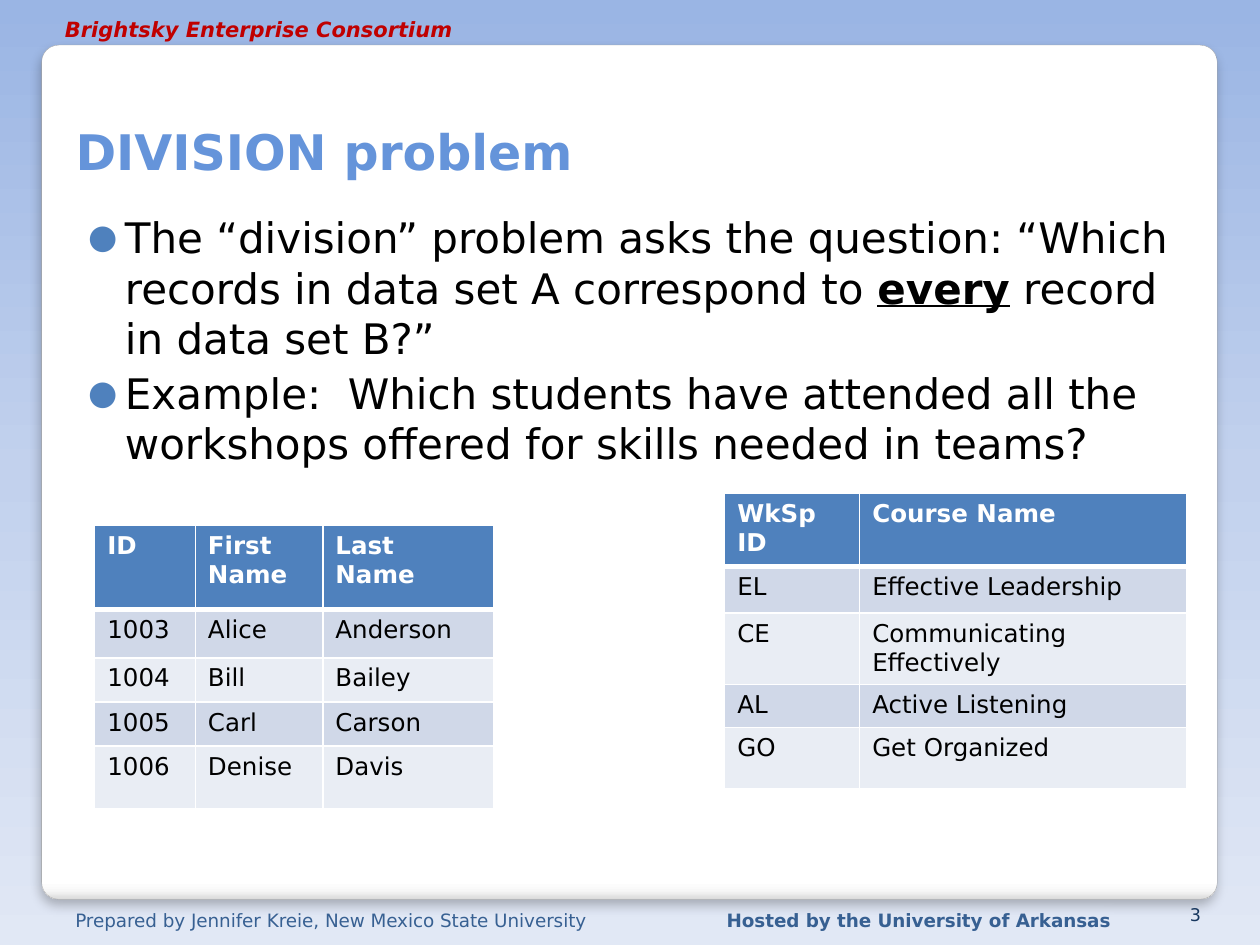
from dataclasses import dataclass

from pptx import Presentation
from pptx.dml.color import RGBColor
from pptx.enum.shapes import MSO_SHAPE
from pptx.enum.text import MSO_ANCHOR, PP_ALIGN
from pptx.oxml import parse_xml
from pptx.oxml.ns import nsdecls, qn
from pptx.util import Cm, Pt


@dataclass(frozen=True)
class Theme:
    font: str = "DejaVu Sans"
    background: tuple = ((0, "9AB5E4"), (50, "C2D1ED"), (100, "E1E8F5"))
    panel: tuple = ((0, "FFFFFF"), (98, "FFFFFF"), (99, "F7F7F7"), (100, "DADADA"))
    panel_line: str = "A4A4A4"
    shadow: str = "000000"
    title: str = "6594DA"
    text: str = "000000"
    accent: str = "4F81BD"
    footer: str = "376092"
    number: str = "17375E"
    banner: str = "C00000"
    white: str = "FFFFFF"
    bands: tuple = ("D0D8E8", "E9EDF4")
    title_size: float = 28
    body_size: float = 24
    table_size: float = 14
    banner_size: float = 12
    footer_size: float = 10.5
    number_size: float = 10


THEME = Theme()


def add_run(paragraph, text, size, color=THEME.text, bold=False, italic=False, underline=False):
    run = paragraph.add_run()
    run.text = text
    font = run.font
    font.name = THEME.font
    font.size = Pt(size)
    font.color.rgb = RGBColor.from_string(color)
    font.bold, font.italic, font.underline = bold, italic, underline


def fill_gradient(fill, element, stops):
    fill.gradient()
    fill.gradient_angle = 270
    stop_list = next(element.iter(qn("a:gsLst")))
    for stop in list(stop_list):
        stop_list.remove(stop)
    for position, color in stops:
        stop_list.append(parse_xml(
            f'<a:gs {nsdecls("a")} pos="{position * 1000}"><a:srgbClr val="{color}"/></a:gs>'))


def add_panel(slide):
    panel = slide.shapes.add_shape(
        MSO_SHAPE.ROUNDED_RECTANGLE, Cm(0.84), Cm(0.91), Cm(23.7), Cm(17.22))
    panel.adjustments[0] = 0.02
    fill_gradient(panel.fill, panel._element, THEME.panel)
    panel.line.color.rgb = RGBColor.from_string(THEME.panel_line)
    panel.line.width = Pt(0.16)
    panel.shadow.inherit = False
    effects = next(panel._element.iter(qn("a:effectLst")))
    effects.append(parse_xml(
        f'<a:outerShdw {nsdecls("a")} blurRad="{Pt(6)}" dist="{Pt(4)}" dir="5400000" rotWithShape="0">'
        f'<a:srgbClr val="{THEME.shadow}"><a:alpha val="25000"/></a:srgbClr></a:outerShdw>'))
    slide.shapes._spTree.insert(2, panel._element)


def add_title(slide, text):
    title = slide.shapes.title
    title.left, title.top, title.width, title.height = Cm(1.27), Cm(0.84), Cm(22.73), Cm(2.92)
    title.text_frame.vertical_anchor = MSO_ANCHOR.BOTTOM
    paragraph = title.text_frame.paragraphs[0]
    paragraph.alignment = PP_ALIGN.LEFT
    add_run(paragraph, text, THEME.title_size, THEME.title, bold=True)


def add_label(slide, text, left, top, width, anchor=MSO_ANCHOR.TOP, align=PP_ALIGN.LEFT, **style):
    box = slide.shapes.add_textbox(Cm(left), Cm(top), Cm(width), Cm(0.58))
    box.text_frame.word_wrap = True
    box.text_frame.vertical_anchor = anchor
    paragraph = box.text_frame.paragraphs[0]
    paragraph.alignment = align
    add_run(paragraph, text, **style)


def set_bullet(paragraph):
    properties = paragraph._p.get_or_add_pPr()
    properties.set("marL", str(Cm(0.74)))
    properties.set("indent", str(-Cm(0.74)))
    for bullet in (f'<a:buClr {nsdecls("a")}><a:srgbClr val="{THEME.accent}"/></a:buClr>',
                   f'<a:buSzPct {nsdecls("a")} val="80000"/>',
                   f'<a:buFont {nsdecls("a")} typeface="{THEME.font}"/>',
                   f'<a:buChar {nsdecls("a")} char="●"/>'):
        properties.append(parse_xml(bullet))


def add_bullets(slide, items):
    frame = slide.shapes.add_textbox(Cm(1.27), Cm(4.02), Cm(22.73), Cm(12.7)).text_frame
    frame.word_wrap = True
    frame.margin_left, frame.margin_top = Cm(0.51), Cm(0.25)
    for index, runs in enumerate(items):
        paragraph = frame.add_paragraph() if index else frame.paragraphs[0]
        paragraph.space_before = Pt(2.5)
        set_bullet(paragraph)
        for text, style in runs:
            add_run(paragraph, text, THEME.body_size, **style)


def set_borders(cell, top, bottom):
    properties = cell._tc.get_or_add_tcPr()
    sides = (("lnL", 1), ("lnR", 1), ("lnT", top), ("lnB", bottom))
    for index, (side, width) in enumerate(sides):
        properties.insert(index, parse_xml(
            f'<a:{side} {nsdecls("a")} w="{Pt(width)}"><a:solidFill>'
            f'<a:srgbClr val="{THEME.white}"/></a:solidFill></a:{side}>'))


def add_data_table(slide, left, top, widths, heights, rows):
    table = slide.shapes.add_table(
        len(rows), len(widths), Cm(left), Cm(top), Cm(sum(widths)), Cm(sum(heights))).table
    table.horz_banding = False
    table.first_row = False
    for column, width in zip(table.columns, widths):
        column.width = Cm(width)
    for row_index, (row, height, texts) in enumerate(zip(table.rows, heights, rows)):
        row.height = Cm(height)
        header = row_index == 0
        fill = THEME.accent if header else THEME.bands[(row_index - 1) % 2]
        for cell, text in zip(row.cells, texts):
            cell.fill.solid()
            cell.fill.fore_color.rgb = RGBColor.from_string(fill)
            set_borders(cell, top=3 if row_index == 1 else 1, bottom=3 if header else 1)
            add_run(cell.text_frame.paragraphs[0], text, THEME.table_size,
                    THEME.white if header else THEME.text, bold=header)


def main():
    presentation = Presentation()
    presentation.slide_width, presentation.slide_height = Cm(25.4), Cm(19.05)
    slide = presentation.slides.add_slide(presentation.slide_layouts[5])
    fill_gradient(slide.background.fill, slide._element, THEME.background)
    add_panel(slide)
    add_label(slide, "Prepared by Jennifer Kreie, New Mexico State University", 1.27, 18.2, 11.33,
              size=THEME.footer_size, color=THEME.footer)
    add_label(slide, "Hosted by the University of Arkansas", 14.4, 18.2, 8.46,
              size=THEME.footer_size, color=THEME.footer, bold=True)
    add_label(slide, "Brightsky Enterprise Consortium", 1.06, 0.2, 8.46,
              size=THEME.banner_size, color=THEME.banner, bold=True, italic=True)
    add_title(slide, "DIVISION problem")
    add_bullets(slide, [
        [("The “division” problem asks the question: “Which records in data set A correspond to ", {}),
         ("every", {"bold": True, "underline": True}),
         (" record in data set B?”", {})],
        [("Example:  Which students have attended all the workshops offered for skills needed in teams?", {})],
    ])
    add_label(slide, "3", 23.19, 18.2, 1.27, anchor=MSO_ANCHOR.BOTTOM, align=PP_ALIGN.RIGHT,
              size=THEME.number_size, color=THEME.number)
    add_data_table(slide, 1.91, 10.59, [2.03, 2.57, 3.45], [1.7, 0.97, 0.89, 0.89, 1.27], [
        ("ID", "First Name", "Last Name"),
        ("1003", "Alice", "Anderson"),
        ("1004", "Bill", "Bailey"),
        ("1005", "Carl", "Carson"),
        ("1006", "Denise", "Davis"),
    ])
    add_data_table(slide, 14.61, 9.95, [2.72, 6.59], [1.47, 0.94, 1.42, 0.86, 1.24], [
        ("WkSp ID", "Course Name"),
        ("EL", "Effective Leadership"),
        ("CE", "Communicating Effectively"),
        ("AL", "Active Listening"),
        ("GO", "Get Organized"),
    ])
    presentation.save("out.pptx")


if __name__ == "__main__":
    main()
